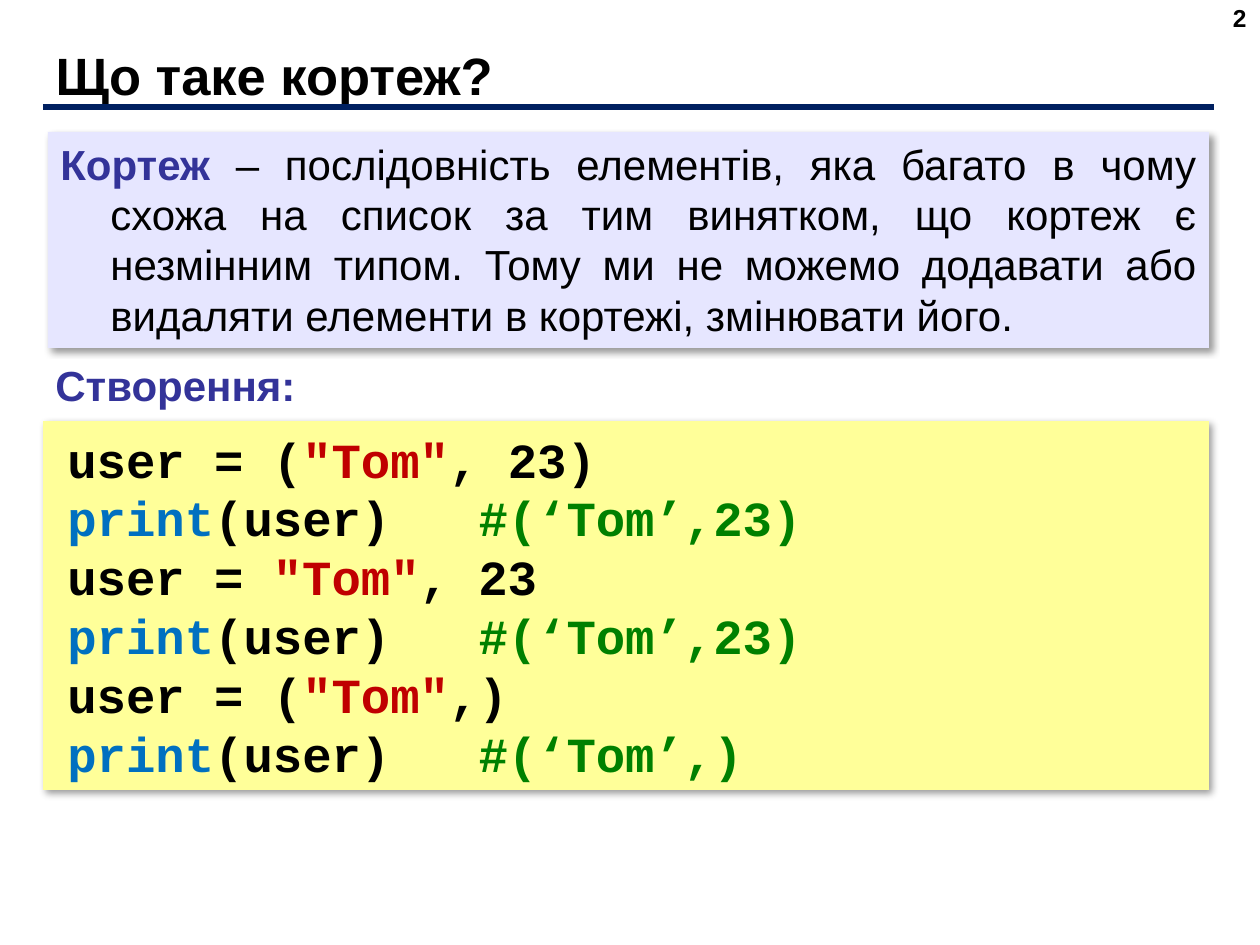
from pptx import Presentation
from pptx.dml.color import RGBColor
from pptx.enum.shapes import MSO_CONNECTOR as LINE, MSO_SHAPE as SHAPE
from pptx.enum.text import MSO_ANCHOR as ANCHOR, MSO_AUTO_SIZE as FIT, PP_ALIGN as ALIGN
from pptx.oxml import parse_xml
from pptx.oxml.ns import nsdecls
from pptx.util import Pt

# Content: each paragraph is a list of (text, colour) runs
TITLE = "Що таке кортеж?"
NUMBER = "2"
HEAD = "Створення:"
TERM = "Кортеж"
MEANING = (" – послідовність елементів, яка багато в чому схожа на список "
           "за тим винятком, що кортеж є незмінним типом. Тому ми не можемо "
           "додавати або видаляти елементи в кортежі, змінювати його.")
CALL = [("print", "call"), ("(user)   ", "text")]
CODE = [
    [("user = (", "text"), ('"Tom"', "string"), (", 23)", "text")],
    CALL + [("#(‘Tom’,23)", "note")],
    [("user =", "text"), (' "Tom"', "string"), (", 23", "text")],
    CALL + [("#(‘Tom’,23)", "note")],
    [("user = (", "text"), ('"Tom"', "string"), (",)", "text")],
    CALL + [("#(‘Tom’,)", "note")],
]
COLORS = {
    "text": "000000", "term": "333399", "string": "C00000", "call": "0070C0",
    "note": "008000", "rule": "002060", "lilac": "E6E6FF", "yellow": "FFFF99",
}
SCALE = 914400 / 126


def px(n):
    return round(n * SCALE)


def color(name):
    return RGBColor.from_string(COLORS[name])


def write(shape, paras, size, face="Arial", align=ALIGN.LEFT,
          anchor=ANCHOR.TOP, indent=(0, 0), fit=FIT.NONE):
    frame = shape.text_frame
    frame.word_wrap = True
    frame.auto_size = fit
    frame.vertical_anchor = anchor
    for i, runs in enumerate(paras):
        para = frame.add_paragraph() if i else frame.paragraphs[0]
        para.alignment = align
        para.font.size, para.font.name, para.font.bold = Pt(size), face, True
        props = para._p.get_or_add_pPr()
        props.set("marL", str(px(indent[0])))
        props.set("indent", str(px(indent[1])))
        for text, tone in runs:
            run = para.add_run()
            run.text = text
            run.font.color.rgb = color(tone)


def panel(box, fill):
    shape = slide.shapes.add_shape(SHAPE.RECTANGLE, *map(px, box))
    shape.fill.solid()
    shape.fill.fore_color.rgb = color(fill)
    shape.line.fill.background()
    shape.shadow.inherit = False
    effects = shape._element.spPr[-1]
    effects.append(parse_xml(
        f'<a:outerShdw {nsdecls("a")} blurRad="{Pt(4)}" dist="{Pt(3)}" '
        'dir="2700000" algn="tl" rotWithShape="0"><a:srgbClr val="000000">'
        '<a:alpha val="40000"/></a:srgbClr></a:outerShdw>'))
    return shape


def label(box):
    return slide.shapes.add_textbox(*map(px, box))


deck = Presentation()
deck.slide_width, deck.slide_height = px(1260), px(945)
slide = deck.slides.add_slide(deck.slide_layouts[5])

# Title and page number
title = slide.shapes.title
title.left, title.top, title.width, title.height = map(px, (43, 42, 1154, 66))
write(title, [[(TITLE, "text")]], 30, anchor=ANCHOR.MIDDLE)
write(label((965, -3, 294, 66)), [[(NUMBER, "text")]], 14, align=ALIGN.RIGHT)

# Definition
meaning = panel((48, 132, 1161, 216), "lilac")
write(meaning, [[(TERM, "term"), (MEANING, "text")]], 24, align=ALIGN.JUSTIFY,
      indent=(50, -50), fit=FIT.SHAPE_TO_FIT_TEXT)
meaning.text_frame.paragraphs[0].runs[1].font.bold = False

# Code
write(panel((43, 421, 1166, 369), "yellow"), CODE, 28, "Courier New",
      ALIGN.JUSTIFY, ANCHOR.MIDDLE, (25, -13), FIT.SHAPE_TO_FIT_TEXT)

# Rule under the title
rule = slide.shapes.add_connector(LINE.STRAIGHT, px(43), px(107), px(1214), px(107))
rule.line.color.rgb = color("rule")
rule.line.width = Pt(3)
rule._element.spPr.append(parse_xml(f'<a:effectLst {nsdecls("a")}/>'))

# Code heading
write(label((43, 353, 268, 63)), [[(HEAD, "term")]], 24, fit=FIT.SHAPE_TO_FIT_TEXT)

deck.save("out.pptx")
